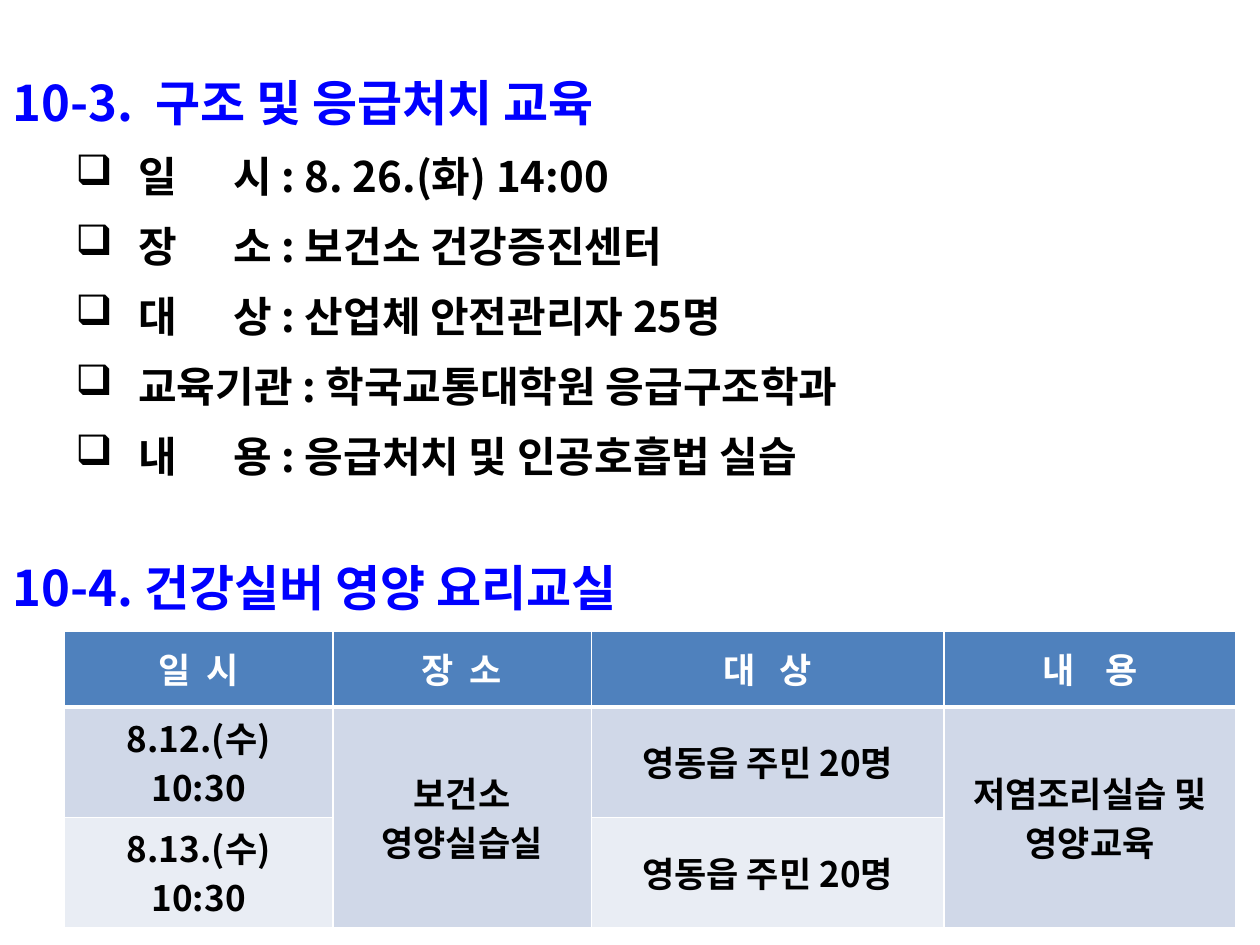
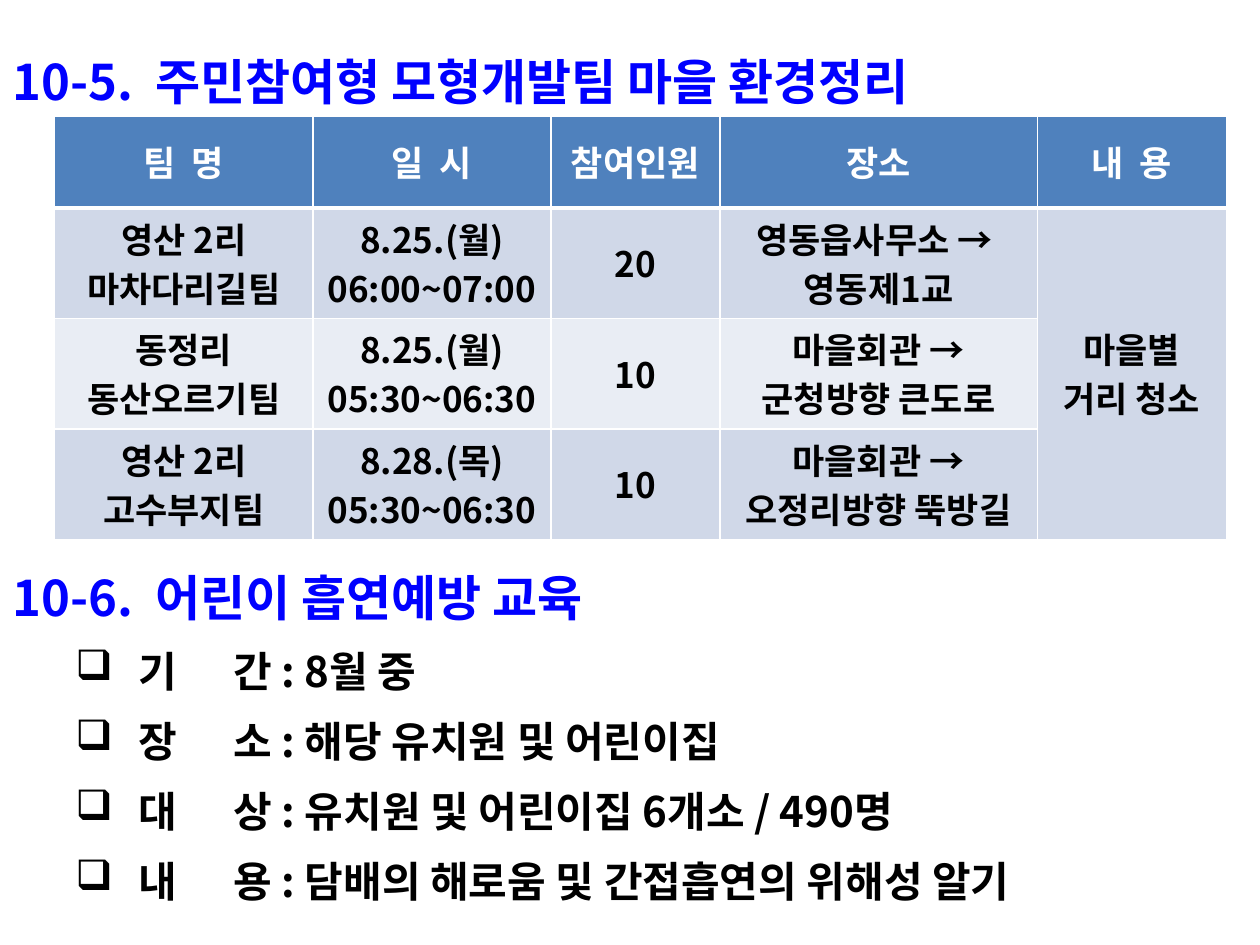
from lxml import etree
from pptx import Presentation
from pptx.dml.color import RGBColor
from pptx.enum.text import MSO_ANCHOR, PP_ALIGN
from pptx.oxml.ns import qn
from pptx.util import Cm, Pt

CENTER = PP_ALIGN.CENTER
MIDDLE = MSO_ANCHOR.MIDDLE
FONT = "Noto Sans CJK KR"
BLUE, BLACK, WHITE = "0000FF", "000000", "FFFFFF"
HEAD, BANDS = "4F81BD", ("D0D8E8", "E9EDF4")
SPACE = 0.224


def paint(color, code):
    """Set a colour format to a hex colour."""
    color.rgb = RGBColor.from_string(code)


def node(parent, tag, **attrs):
    """Append a drawing element with attributes and return it."""
    part = etree.SubElement(parent, qn(tag))
    for name, value in attrs.items():
        part.set(name, str(value))
    return part


def write(para, text, size=20, color=BLACK, gap=0, line=None, align=None):
    """Write bold text whose first space is widened by gap spaces."""
    para.line_spacing = line
    para.alignment = align
    first, space, rest = text.partition(" ") if gap else (text, "", "")
    for piece in filter(None, (first, space, rest)):
        run = para.add_run()
        run.text = piece
        font = run.font
        font.name, font.size, font.bold = FONT, Pt(size), True
        paint(font.color, color)
        props = run._r.get_or_add_rPr()
        node(props, "a:ea", typeface=FONT)
        if piece == " ":
            props.set("spc", str(round(gap * SPACE * size * 100)))


def bullet(para):
    """Give a paragraph a hanging box bullet."""
    props = para._p.get_or_add_pPr()
    props.set("marL", str(Cm(2.54)))
    props.set("indent", str(-Cm(1.27)))
    node(node(props, "a:buClr"), "a:srgbClr", val=BLACK)
    node(props, "a:buChar", char="❑")


def section(slide, top, height, title, items=(), gap=1):
    """Add a section title with its bulleted items."""
    box = slide.shapes.add_textbox(Cm(0), Cm(top), Cm(24.2), Cm(height))
    frame = box.text_frame
    frame.word_wrap = True
    write(frame.paragraphs[0], title, size=28, color=BLUE, gap=gap, line=1.5)
    for item in items:
        para = frame.add_paragraph()
        bullet(para)
        write(para, item, size=24, gap=5 if item[1] == " " else 0, line=Pt(40))


def border(cell, base):
    """Draw white cell borders with the given bottom width."""
    props = cell._tc.get_or_add_tcPr()
    for side, width in zip("LRTB", (1, 1, 1, base)):
        line = node(props, f"a:ln{side}", w=Pt(width))
        node(node(line, "a:solidFill"), "a:srgbClr", val=WHITE)


def grid(slide, left, top, widths, heights, heads, rows):
    """Add a banded table; None joins a cell to the one above."""
    frame = slide.shapes.add_table(
        len(heights), len(widths), Cm(left), Cm(top),
        Cm(sum(widths)), Cm(sum(heights)))
    table = frame.table
    for col, width in zip(table.columns, widths):
        col.width = Cm(width)
    for row, height in zip(table.rows, heights):
        row.height = Cm(height)
    for c, (text, gap) in enumerate(heads):
        fill_cell(table.cell(0, c), text, HEAD, color=WHITE, gap=gap, base=3)
    for r, row in enumerate(rows, 1):
        for c, text in enumerate(row):
            fill_cell(table.cell(r, c), text or "", BANDS[(r - 1) % 2])
    for c in range(len(widths)):
        if rows[-1][c] is None:
            table.cell(1, c).merge(table.cell(len(rows), c))


def fill_cell(cell, text, back, color=BLACK, gap=0, base=1):
    """Format a cell and write one centred paragraph per line."""
    border(cell, base)
    cell.fill.solid()
    paint(cell.fill.fore_color, back)
    cell.vertical_anchor = MIDDLE
    frame = cell.text_frame
    for i, line in enumerate(text.splitlines()):
        para = frame.add_paragraph() if i else frame.paragraphs[0]
        write(para, line, color=color, gap=gap, line=Pt(28), align=CENTER)


def rescue(slide):
    """Build the first aid and cooking class slide."""
    section(slide, 0.74, 6.53, "10-3. 구조 및 응급처치 교육", (
        "일 시 : 8. 26.(화) 14:00",
        "장 소 : 보건소 건강증진센터",
        "대 상 : 산업체 안전관리자 25명",
        "교육기관 : 학국교통대학원 응급구조학과",
        "내 용 : 응급처치 및 인공호흡법 실습"))
    section(slide, 10.52, 6.53, "10-4. 건강실버 영양 요리교실", gap=0)
    grid(slide, 1.3, 12.73, (5.41, 5.21, 7.11, 5.89), (1.52,) * 3,
         (("일 시", 1), ("장 소", 1), ("대 상", 2), ("내 용", 3)),
         (("8.12.(수) 10:30", "보건소\n영양실습실",
           "영동읍 주민 20명", "저염조리실습 및 영양교육"),
          ("8.13.(수) 10:30", None, "영동읍 주민 20명", None)))


def village(slide):
    """Build the village cleaning and smoking prevention slide."""
    section(slide, 0.33, 9.12, "10-5. 주민참여형 모형개발팀 마을 환경정리")
    grid(slide, 1.1, 2.34, (5.21, 4.8, 3.4, 6.4, 3.81), (1.85,) + (2.11,) * 3,
         (("팀 명", 1), ("일 시", 1), ("참여인원", 0), ("장소", 0), ("내 용", 1)),
         (("영산 2리\n마차다리길팀", "8.25.(월)\n06:00~07:00", "20",
           "영동읍사무소 → \n영동제1교", "마을별\n거리 청소"),
          ("동정리\n동산오르기팀", "8.25.(월)\n05:30~06:30", "10",
           "마을회관 →\n군청방향 큰도로", None),
          ("영산 2리\n고수부지팀", "8.28.(목)\n05:30~06:30", "10",
           "마을회관 →\n오정리방향 뚝방길", None)))
    section(slide, 10.72, 8.33, "10-6. 어린이 흡연예방 교육", (
        "기 간 : 8월 중",
        "장 소 : 해당 유치원 및 어린이집",
        "대 상 : 유치원 및 어린이집 6개소 / 490명",
        "내 용 : 담배의 해로움 및 간접흡연의 위해성 알기"))


def main():
    """Build and save both slides."""
    deck = Presentation()
    deck.slide_width, deck.slide_height = Cm(25.4), Cm(19.05)
    for build in (rescue, village):
        build(deck.slides.add_slide(deck.slide_layouts[6]))
    deck.save("out.pptx")


if __name__ == "__main__":
    main()
